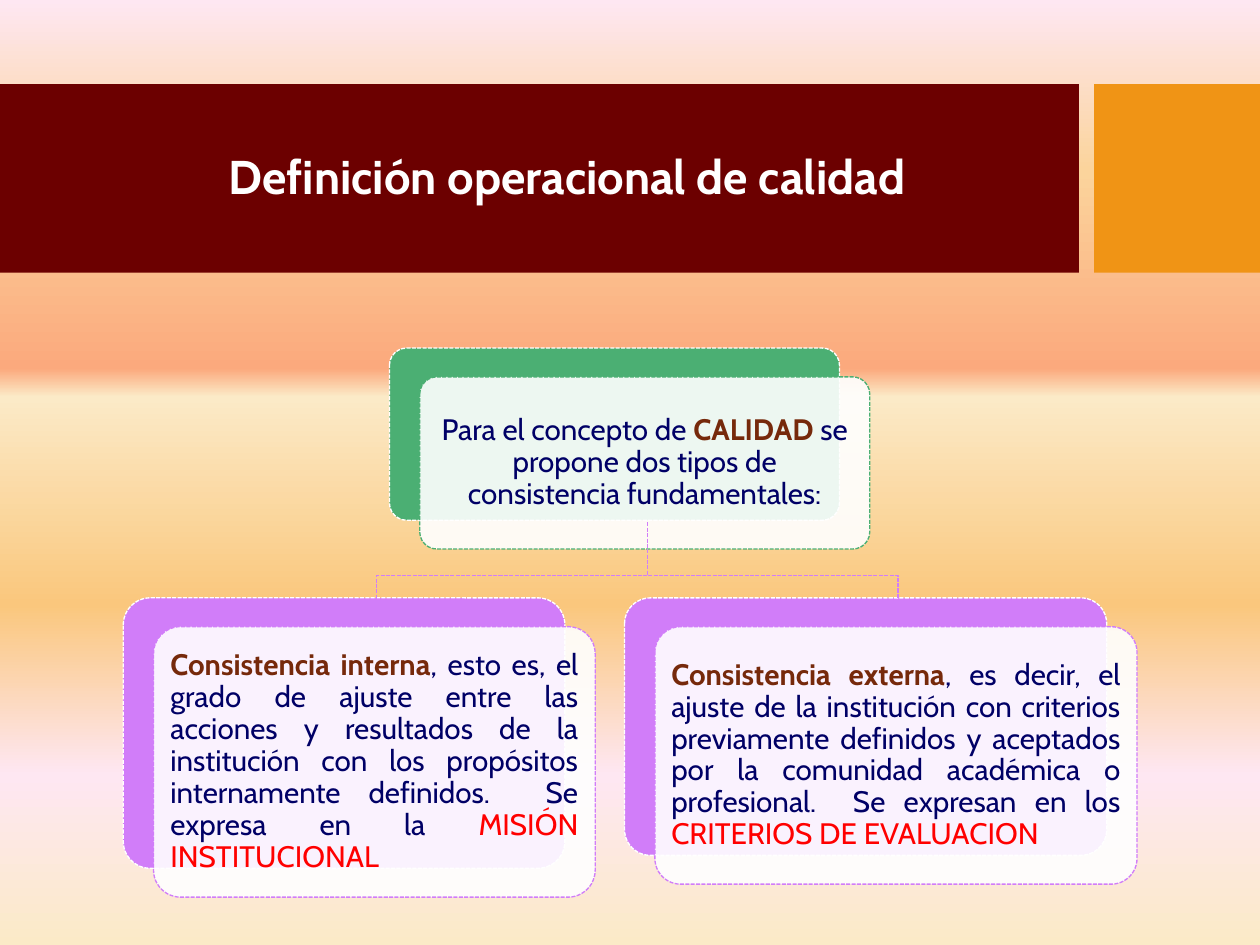
from dataclasses import dataclass

from lxml.etree import SubElement
from pptx import Presentation
from pptx.dml.color import RGBColor
from pptx.enum.dml import MSO_LINE
from pptx.enum.shapes import MSO_SHAPE
from pptx.enum.text import MSO_ANCHOR, PP_ALIGN
from pptx.oxml.ns import qn
from pptx.util import Pt


@dataclass(frozen=True)
class Theme:
    font: str = "Cabin"
    title_size: float = 32
    body_size: float = 20
    line_width: float = 0.9
    line_spacing: float = 0.9
    white: str = "FFFFFF"
    banner: str = "6C0000"
    accent: str = "F09415"
    green: str = "4BAF73"
    violet: str = "D17DF9"
    navy: str = "000066"
    brown: str = "76290B"
    red: str = "FF0000"
    # Stops run from the bottom edge to the top edge
    background: tuple = (
        (0, "FBEAC7"), (18, "FEE7F2"), (36, "FAC77D"), (58, "FBEAC7"),
        (61, "FBA97D"), (82, "FBD49C"), (100, "FEE7F2"),
    )


THEME = Theme()
SLIDE_WIDTH, SLIDE_HEIGHT = 852.48, 639.36
CARD_SHIFT_X, CARD_SHIFT_Y = 20.5, 19.5


def paint_background(slide):
    fill = slide.background.fill
    fill.gradient()
    fill.gradient_angle = 90
    stops = slide.element.find(".//" + qn("a:gsLst"))
    for stop in list(stops):
        stops.remove(stop)
    for percent, color in THEME.background:
        stop = SubElement(stops, qn("a:gs"), pos=str(percent * 1000))
        SubElement(stop, qn("a:srgbClr"), val=color)


def style_line(shape, color):
    shape.line.color.rgb = RGBColor.from_string(color)
    shape.line.width = Pt(THEME.line_width)
    shape.line.dash_style = MSO_LINE.SQUARE_DOT


def add_block(slide, kind, box, color, line_color=None):
    shape = slide.shapes.add_shape(kind, *map(Pt, box))
    shape.shadow.inherit = False
    shape.fill.solid()
    shape.fill.fore_color.rgb = RGBColor.from_string(color)
    if line_color:
        style_line(shape, line_color)
    else:
        shape.line.fill.background()
    return shape


def write_text(shape, runs, size, alignment):
    """Write one paragraph from (text, color, bold) runs."""
    frame = shape.text_frame
    frame.word_wrap = True
    frame.vertical_anchor = MSO_ANCHOR.MIDDLE
    paragraph = frame.paragraphs[0]
    paragraph.alignment = alignment
    paragraph.line_spacing = THEME.line_spacing
    for text, color, bold in runs:
        run = paragraph.add_run()
        run.text = text
        run.font.name = THEME.font
        run.font.size = Pt(size)
        run.font.bold = bold
        run.font.color.rgb = RGBColor.from_string(color)


def add_card(slide, box, color, runs, alignment):
    """Draw a coloured card with a shifted white card holding the text."""
    left, top, width, height = box
    front_box = (left + CARD_SHIFT_X, top + CARD_SHIFT_Y, width, height)
    back = add_block(slide, MSO_SHAPE.ROUNDED_RECTANGLE, box, color, THEME.white)
    front = add_block(slide, MSO_SHAPE.ROUNDED_RECTANGLE, front_box, THEME.white, color)
    for card in (back, front):
        card.adjustments[0] = 0.1
    white = front.element.spPr.find(qn("a:solidFill"))[0]
    SubElement(white, qn("a:alpha"), val="90000")
    frame = front.text_frame
    frame.margin_left = frame.margin_right = Pt(6)
    frame.margin_top = frame.margin_bottom = Pt(6)
    write_text(front, runs, THEME.body_size, alignment)


def add_branch(slide, points, color):
    start, *rest = [(Pt(x), Pt(y)) for x, y in points]
    builder = slide.shapes.build_freeform(*start)
    builder.add_line_segments(rest, close=False)
    branch = builder.convert_to_shape()
    branch.shadow.inherit = False
    branch.fill.background()
    style_line(branch, color)


def main():
    presentation = Presentation()
    presentation.slide_width = Pt(SLIDE_WIDTH)
    presentation.slide_height = Pt(SLIDE_HEIGHT)
    slide = presentation.slides.add_slide(presentation.slide_layouts[6])
    paint_background(slide)

    # Title band
    add_block(slide, MSO_SHAPE.RECTANGLE, (0, 57, 730, 127.5), THEME.banner)
    add_block(slide, MSO_SHAPE.RECTANGLE, (740.2, 57, 112.28, 127.5), THEME.accent)
    title = slide.shapes.add_textbox(Pt(47.5), Pt(70.5), Pt(672.5), Pt(101))
    write_text(title, [("Definición operacional de calidad", THEME.white, True)],
               THEME.title_size, PP_ALIGN.CENTER)

    # Concept and its two kinds of consistency
    add_card(slide, (263.5, 235.5, 304.5, 116.5), THEME.green, [
        ("Para el concepto de ", THEME.navy, False),
        ("CALIDAD ", THEME.brown, True),
        ("se propone dos tipos de consistencia fundamentales:", THEME.navy, False),
    ], PP_ALIGN.CENTER)
    add_card(slide, (83.4, 404.5, 298.8, 183), THEME.violet, [
        ("Consistencia interna", THEME.brown, True),
        (", esto es, el grado de ajuste entre las acciones y resultados de la "
         "institución con los propósitos internamente definidos.  Se expresa en la ",
         THEME.navy, False),
        ("MISIÓN INSTITUCIONAL", THEME.red, False),
    ], PP_ALIGN.JUSTIFY)
    add_card(slide, (422.6, 404.5, 326.2, 174.2), THEME.violet, [
        ("Consistencia externa", THEME.brown, True),
        (", es decir, el ajuste de la institución con criterios previamente "
         "definidos y aceptados por la comunidad académica o profesional.  "
         "Se expresan en los ", THEME.navy, False),
        ("CRITERIOS DE EVALUACION", THEME.red, False),
    ], PP_ALIGN.JUSTIFY)

    # Branches from the concept to each kind
    trunk_x, trunk_top, fork_y, branch_end = 438.3, 353.5, 389.5, 406.8
    for branch_x in (607.7, 254.9):
        add_branch(slide, [(trunk_x, trunk_top), (trunk_x, fork_y),
                           (branch_x, fork_y), (branch_x, branch_end)], THEME.violet)

    presentation.save("out.pptx")


if __name__ == "__main__":
    main()
